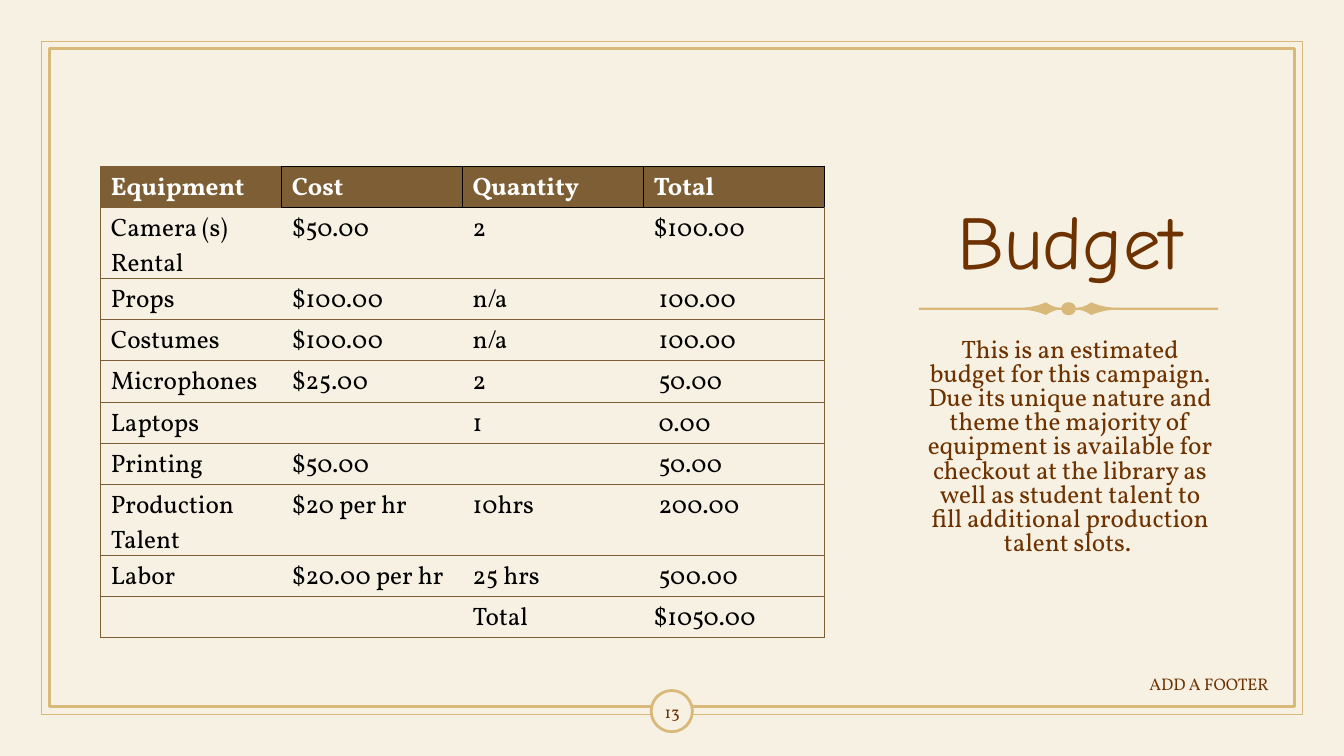
"""Build the budget slide: cost table, ornament, title and summary in a double frame."""
from lxml import etree
from pptx import Presentation
from pptx.dml.color import RGBColor
from pptx.enum import shapes, text
from pptx.oxml import ns
from pptx.util import Cm, Pt

CREAM = RGBColor(0xF7, 0xF1, 0xE4)
GOLD = RGBColor(0xD8, 0xB9, 0x7A)
RUST = RGBColor(0x6D, 0x32, 0x00)
BROWN = RGBColor(0x7E, 0x5E, 0x34)
WHITE = RGBColor(0xFF, 0xFF, 0xFF)
BLACK = RGBColor(0, 0, 0)
ALIGN = text.PP_ALIGN
MIDDLE = text.MSO_ANCHOR.MIDDLE


def write(frame, words, size=18, color=RUST, font="Vollkorn", bold=False,
          align=ALIGN.LEFT, anchor=text.MSO_ANCHOR.TOP, spacing=None, before=0):
    frame.word_wrap = True
    frame.vertical_anchor = anchor
    paragraph = frame.paragraphs[0]
    paragraph.alignment = align
    paragraph.line_spacing = spacing
    paragraph.space_before = Pt(before)
    run = paragraph.add_run()
    run.text = words
    run.font.size = Pt(size)
    run.font.name = font
    run.font.bold = bold
    run.font.color.rgb = color
    return paragraph


def edge(cell, side, color, width):
    line = etree.SubElement(cell._tc.get_or_add_tcPr(), ns.qn(f"a:ln{side}"), w=str(Pt(width)))
    if color is None:
        etree.SubElement(line, ns.qn("a:noFill"))
    else:
        fill = etree.SubElement(line, ns.qn("a:solidFill"))
        etree.SubElement(fill, ns.qn("a:srgbClr"), val=str(color))


deck = Presentation()
deck.slide_width, deck.slide_height = Cm(33.87), Cm(19.05)
slide = deck.slides.add_slide(deck.slide_layouts[1])
slide.background.fill.solid()
slide.background.fill.fore_color.rgb = CREAM

RECT, OVAL = shapes.MSO_SHAPE.RECTANGLE, shapes.MSO_SHAPE.OVAL
for kind, place, weight in (
    (RECT, (1.04, 1.04, 31.78, 16.97), 1),
    (RECT, (1.24, 1.22, 31.39, 16.59), 2),
    (OVAL, (16.41, 17.4, 1.04, 1.04), 2),
):
    border = slide.shapes.add_shape(kind, *map(Cm, place))
    border.shadow.inherit = False
    border.line.color.rgb = GOLD
    border.line.width = Pt(weight)
    if kind == OVAL:
        border.fill.solid()
        border.fill.fore_color.rgb = CREAM
    else:
        border.fill.background()

# Each curve: two control points and an end, in cm from the ornament's centre.
CURVES = (
    ((-1.11, -0.03), (-0.83, -0.04), (-0.57, -0.16), (-0.57, -0.16)),
    ((-0.57, -0.16), (-0.46, -0.08), (-0.33, -0.03), (-0.25, -0.03)),
    ((-0.18, -0.03), (-0.15, -0.13), (-0.08, -0.16), (0, -0.16)),
)
STEPS = 8
quarter = [(-3.77, -0.03)]
for curve in CURVES:
    for step in range(STEPS + 1):
        t = step / STEPS
        weights = ((1 - t) ** 3, 3 * t * (1 - t) ** 2, 3 * t * t * (1 - t), t ** 3)
        quarter.append(tuple(sum(w * point[axis] for w, point in zip(weights, curve))
                             for axis in (0, 1)))
upper = quarter + [(-x, y) for x, y in reversed(quarter)]
outline = [(Cm(26.93 + x), Cm(7.78 + y))
           for x, y in upper + [(x, -y) for x, y in reversed(upper)]]
builder = slide.shapes.build_freeform(*outline[0])
builder.add_line_segments(outline[1:], close=True)
ornament = builder.convert_to_shape()
ornament.shadow.inherit = False
ornament.fill.solid()
ornament.fill.fore_color.rgb = GOLD
ornament.line.fill.background()

for words, place, align in (
    ("13", (16.18, 17.42, 1.52, 1.02), ALIGN.CENTER),
    ("ADD A FOOTER", (22.78, 16.71, 9.45, 1.02), ALIGN.RIGHT),
):
    footer = slide.shapes.add_textbox(*map(Cm, place))
    write(footer.text_frame, words, size=12, align=align, anchor=MIDDLE)

summary = slide.placeholders[1]
summary.left, summary.top, summary.width, summary.height = map(Cm, (23.04, 8.41, 7.85, 5.94))
summary_line = write(
    summary.text_frame,
    "This is an estimated budget for this campaign. Due its unique nature and theme "
    "the majority of equipment is available for checkout at the library as well as "
    "student talent to fill additional production talent slots. ",
    align=ALIGN.CENTER, spacing=0.8, before=10)
summary.text_frame.auto_size = text.MSO_AUTO_SIZE.TEXT_TO_FIT_SHAPE
bullet = summary_line._p.get_or_add_pPr()
bullet.set("marL", "0")
bullet.set("indent", "0")
etree.SubElement(bullet, ns.qn("a:buNone"))

title = slide.shapes.title
title.left, title.top, title.width, title.height = map(Cm, (23.04, 5.18, 7.85, 2.01))
write(title.text_frame, "Budget", size=54, font="Comic Neue", align=ALIGN.CENTER,
      anchor=MIDDLE, spacing=0.9)
title.text_frame.auto_size = text.MSO_AUTO_SIZE.NONE

BUDGET = (
    ("Equipment", "Cost", "Quantity", "Total"),
    ("Camera (s) Rental", "$50.00", "2", "$100.00"),
    ("Props", "$100.00", "n/a", " 100.00"),
    ("Costumes", "$100.00", "n/a", " 100.00"),
    ("Microphones", "$25.00", "2", " 50.00"),
    ("Laptops", "", "1", " 0.00"),
    ("Printing", "$50.00", "", " 50.00"),
    ("Production Talent", "$20 per hr", "10hrs", " 200.00"),
    ("Labor", "$20.00 per hr", "25 hrs", " 500.00"),
    ("", "", "Total", "$1050.00"),
)
NO_STYLE = "{2D5ABB26-0587-4C30-8999-92F81FD0307C}"
budget = slide.shapes.add_table(len(BUDGET), 4, Cm(2.54), Cm(4.19), Cm(18.24), Cm(10.4)).table
budget.horz_banding = False
budget._tbl.tblPr.find(ns.qn("a:tableStyleId")).text = NO_STYLE
for r, entries in enumerate(BUDGET):
    for c, entry in enumerate(entries):
        cell = budget.cell(r, c)
        header = r == 0
        write(cell.text_frame, entry, color=WHITE if header else BLACK, bold=header)
        for side in "LRTB":
            outer = (side, c) in (("L", 0), ("R", 3))
            if header and (c > 0 or side == "R") or r == 1 and c > 0 and side == "T":
                edge(cell, side, BLACK, 1)
            else:
                edge(cell, side, BROWN if outer or side in "TB" else None, 0.5)
        if header:
            cell.fill.solid()
            cell.fill.fore_color.rgb = BROWN
        else:
            cell.fill.background()

deck.save("out.pptx")
